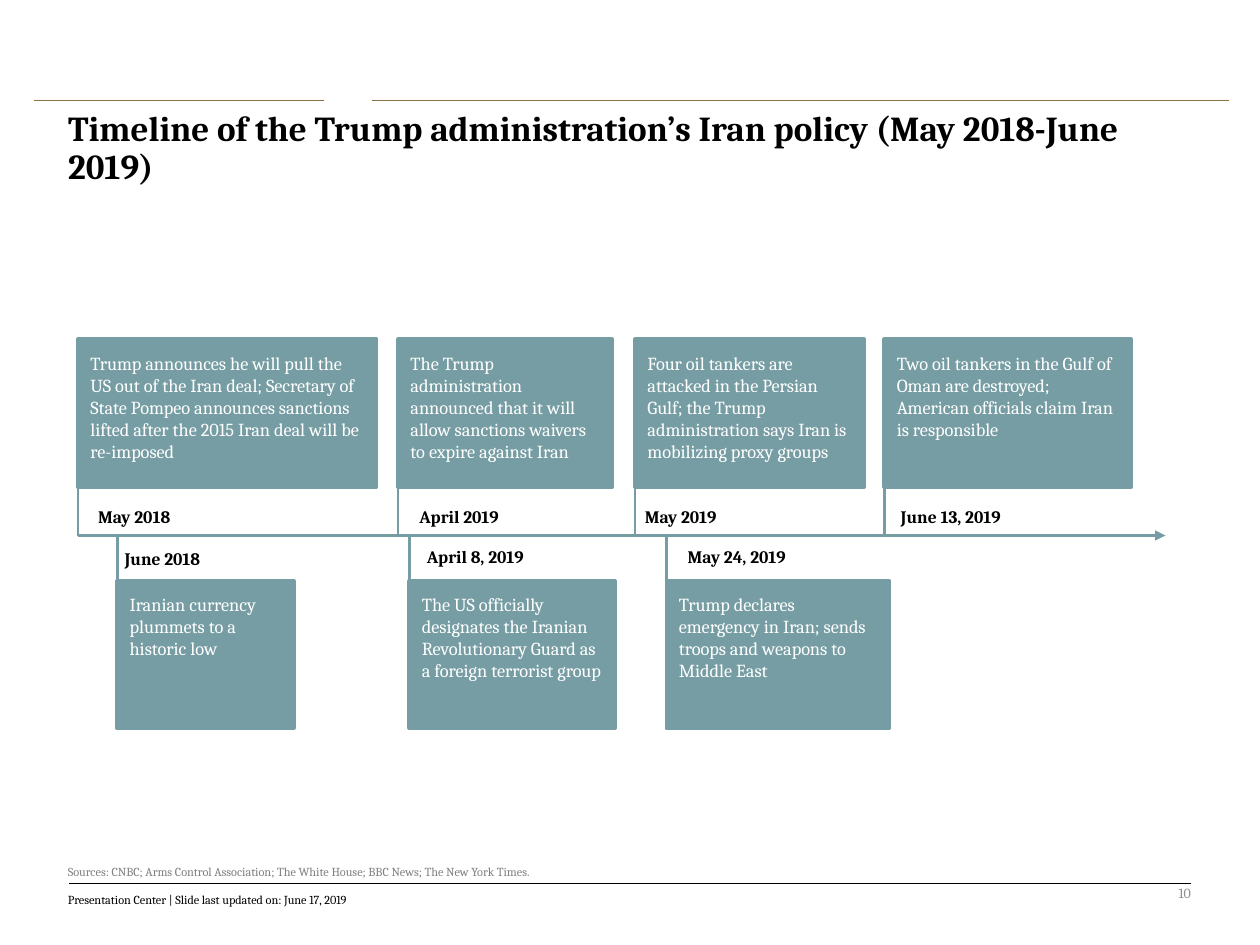
from dataclasses import dataclass
from typing import NamedTuple

from lxml import etree
from pptx import Presentation
from pptx.dml.color import RGBColor
from pptx.enum import shapes as sh, text as tx
from pptx.oxml.ns import qn
from pptx.util import Pt


@dataclass(frozen=True)
class Theme:
    font: str = "Cambria"
    teal: str = "769DA3"
    tan: str = "8B724A"
    black: str = "000000"
    white: str = "FFFFFF"
    gray: str = "808080"
    pale: str = "8C8C8C"
    title: float = 20
    body: float = 10.5
    date: float = 10
    page: float = 8
    note: float = 7


class Row(NamedTuple):
    """Heights shared by the events on one side of the axis."""
    box: float
    label: float
    stem: float


class Event(NamedTuple):
    row: Row
    left: float
    width: float
    date: str
    inset: float  # label offset from the box's left edge
    span: float   # label width
    text: str
    drop: float = 0  # extra label offset downwards


class Rule(NamedTuple):
    left: float
    right: float
    y: float
    color: str


THEME = Theme()
AXIS, HIGH, STEM = 306, 84.2, 39.6
TOP = Row(194, 285.8, AXIS - STEM)
LOW = Row(332, 308.2, AXIS - 0.5)

EVENTS = [
    Event(TOP, 44.6, 170.6, "May 2018", 4.4, 114.5,
          "Trump announces he will pull the US out of the Iran deal; Secretary of State "
          "Pompeo announces sanctions lifted after the 2015 Iran deal will be re-imposed"),
    Event(LOW, 67, 100.8, "June 2018", -2.9, 67.7,
          "Iranian currency plummets to a historic low", 1.4),
    Event(TOP, 227.5, 122.4, "April 2019", 5.1, 80.6,
          "The Trump administration announced that it will allow sanctions waivers to "
          "expire against Iran"),
    Event(LOW, 234, 117.4, "April 8, 2019", 2.9, 114.5,
          "The US officially designates the Iranian Revolutionary Guard as a foreign "
          "terrorist group"),
    Event(TOP, 362.9, 131, "May 2019", -1.5, 87.1,
          "Four oil tankers are attacked in the Persian Gulf; the Trump administration "
          "says Iran is mobilizing proxy groups"),
    Event(LOW, 380.9, 127.4, "May 24, 2019", 5, 111.6,
          "Trump declares emergency in Iran; sends troops and weapons to Middle East"),
    Event(TOP, 505.4, 141.1, "June 13, 2019", 2.2, 111.6,
          "Two oil tankers in the Gulf of Oman are destroyed; American officials claim "
          "Iran is responsible"),
]

RULES = [
    Rule(39.6, 680.4, 504.7, THEME.black),
    Rule(19.4, 185, 57.6, THEME.tan),
    Rule(212.4, 702, 57.6, THEME.tan),
]


def write(shape, words: str, size: float, color: str, bold: bool = False,
          align=tx.PP_ALIGN.LEFT, anchor=tx.MSO_ANCHOR.TOP, space: float = 1.0) -> None:
    frame = shape.text_frame
    frame.word_wrap = True
    frame.auto_size = tx.MSO_AUTO_SIZE.NONE
    frame.vertical_anchor = anchor
    frame.text = words
    para = frame.paragraphs[0]
    para.alignment, para.line_spacing = align, space
    font = para.font
    font.name, font.size, font.bold = THEME.font, Pt(size), bold
    font.color.rgb = RGBColor.from_string(color)


def note(slide, left: float, top: float, width: float, high: float,
         words: str, size: float, color: str, **style) -> None:
    box = slide.shapes.add_textbox(Pt(left), Pt(top), Pt(width), Pt(high))
    write(box, words, size, color, **style)


def line(slide, x1: float, y1: float, x2: float, y2: float,
         color: str, width: float, arrow: bool = False) -> None:
    link = slide.shapes.add_connector(
        sh.MSO_CONNECTOR.STRAIGHT, Pt(x1), Pt(y1), Pt(x2), Pt(y2))
    link.line.color.rgb = RGBColor.from_string(color)
    link.line.width = Pt(width)
    if arrow:
        etree.SubElement(link.line._get_or_add_ln(), qn("a:tailEnd"), type="triangle")
    etree.SubElement(link._element.spPr, qn("a:effectLst"))


def card(slide, item: Event) -> None:
    box = slide.shapes.add_shape(sh.MSO_SHAPE.RECTANGLE, Pt(item.left),
                                 Pt(item.row.box), Pt(item.width), Pt(HIGH))
    box.shadow.inherit = False
    box.fill.solid()
    box.fill.fore_color.rgb = RGBColor.from_string(THEME.teal)
    box.line.color.rgb = RGBColor.from_string(THEME.teal)
    box.line.width = Pt(2.25)
    frame = box.text_frame
    frame.margin_left = frame.margin_right = Pt(7.2)
    frame.margin_top = frame.margin_bottom = Pt(7.2)
    write(box, item.text, THEME.body, THEME.white)


def event(slide, item: Event) -> None:
    row = item.row
    line(slide, item.left, row.stem, item.left, row.stem + STEM, THEME.teal, 1.5)
    card(slide, item)
    note(slide, item.left + item.inset, row.label + item.drop, item.span, 19.4,
         item.date, THEME.date, THEME.black, bold=True)


def main() -> None:
    deck = Presentation()
    deck.slide_width, deck.slide_height = Pt(720), Pt(540)
    slide = deck.slides.add_slide(deck.slide_layouts.get_by_name("Title Only"))

    title = slide.shapes.title
    title.left, title.top, title.width, title.height = Pt(31.7), Pt(59.8), Pt(662.4), Pt(50.4)
    write(title, "Timeline of the Trump administration’s Iran policy (May 2018-June 2019)",
          THEME.title, THEME.black, bold=True, space=0.9)

    for rule in RULES:
        line(slide, rule.left, rule.y, rule.right, rule.y, rule.color, 0.5)

    line(slide, 44.6, AXIS, 666, AXIS, THEME.teal, 1.5, arrow=True)
    for item in EVENTS:
        event(slide, item)

    note(slide, 31.7, 489.6, 649.4, 15.1,
         "Sources: CNBC; Arms Control Association; The White House; BBC News; "
         "The New York Times.", THEME.note, THEME.gray, space=1.1)
    note(slide, 31.7, 505.4, 239.8, 26.6,
         "Presentation Center | Slide last updated on: June 17, 2019",
         THEME.note, THEME.black, space=1.1)
    note(slide, 508.3, 496.1, 179.3, 28.8, "10", THEME.page, THEME.pale,
         align=tx.PP_ALIGN.RIGHT, anchor=tx.MSO_ANCHOR.MIDDLE)

    deck.save("out.pptx")


if __name__ == "__main__":
    main()
